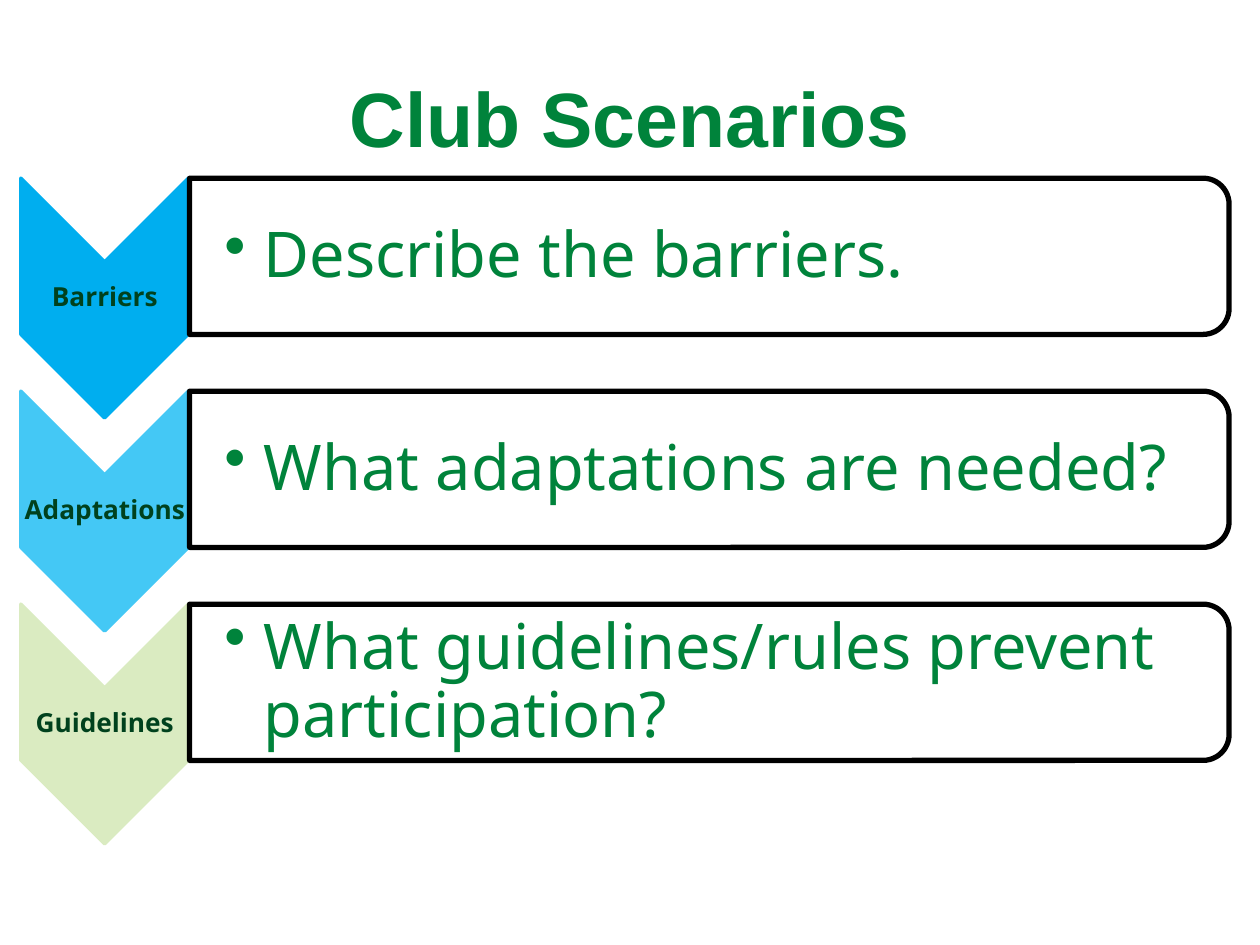
import dataclasses

import lxml.etree
import pptx
import pptx.dml.color
import pptx.enum.shapes
import pptx.enum.text
import pptx.oxml.ns
import pptx.util

Pt = pptx.util.Pt
RGBColor = pptx.dml.color.RGBColor
ShapeType = pptx.enum.shapes.MSO_SHAPE
Align = pptx.enum.text.PP_ALIGN
qn = pptx.oxml.ns.qn

GREEN = RGBColor(0x00, 0x83, 0x3B)
DARK_GREEN = RGBColor(0x00, 0x41, 0x1D)
BLUE = RGBColor(0x00, 0xAE, 0xEF)
LIGHT_BLUE = RGBColor(0x44, 0xC8, 0xF5)
PALE_GREEN = RGBColor(0xDA, 0xEB, 0xC1)
WHITE = RGBColor(0xFF, 0xFF, 0xFF)
BLACK = RGBColor(0x00, 0x00, 0x00)

ROW_PITCH = 121.7
HANGING_INDENT = 22.5


@dataclasses.dataclass(frozen=True)
class Box:
    left: float
    top: float
    width: float
    height: float

    def moved_down(self, distance: float) -> "Box":
        return dataclasses.replace(self, top=self.top + distance)

    def lengths(self) -> list:
        return [Pt(value) for value in dataclasses.astuple(self)]


@dataclasses.dataclass(frozen=True)
class TextStyle:
    font: str
    size: float
    color: RGBColor
    bold: bool = False
    centered: bool = True
    insets: tuple = (7.2, 3.6, 7.2, 3.6)
    line_spacing: float = 1.0
    space_after: float = 0
    bullet: str = ""


@dataclasses.dataclass(frozen=True)
class Scenario:
    label: str
    question: str
    color: RGBColor


TITLE_BOX = Box(36, 21.6, 648, 90)
CHEVRON_BOX = Box(-8.7, 122.4, 137, 95.8)
LABEL_BOX = Box(12, 149.6, 95.8, 41)
PANEL_BOX = Box(360.7, -150.5, 89.3, 594)
QUESTION_BOX = Box(108, 106.4, 589.7, 80.6)

TITLE_STYLE = TextStyle("Arial", 44, GREEN, bold=True)
LABEL_STYLE = TextStyle("Noto Sans", 15, DARK_GREEN, bold=True,
                        insets=(0.75, 0.75, 0.75, 0.75),
                        line_spacing=0.9, space_after=5.25)
QUESTION_STYLE = TextStyle("Noto Sans", 36, GREEN, centered=False,
                           insets=(20.2, 1.8, 1.8, 1.8),
                           line_spacing=0.9, space_after=5.4, bullet="•")

SCENARIOS = [
    Scenario("Barriers", "Describe the barriers.", BLUE),
    Scenario("Adaptations", "What adaptations are needed?", LIGHT_BLUE),
    Scenario("Guidelines", "What guidelines/rules prevent participation?", PALE_GREEN),
]


def add_text(slide: pptx.slide.Slide, box: Box, text: str, style: TextStyle) -> None:
    frame = slide.shapes.add_textbox(*box.lengths()).text_frame
    frame.word_wrap = True
    frame.vertical_anchor = pptx.enum.text.MSO_ANCHOR.MIDDLE
    (frame.margin_left, frame.margin_top,
     frame.margin_right, frame.margin_bottom) = map(Pt, style.insets)
    paragraph = frame.paragraphs[0]
    paragraph.alignment = Align.CENTER if style.centered else Align.LEFT
    paragraph.line_spacing = style.line_spacing
    paragraph.space_after = Pt(style.space_after)
    if style.bullet:
        properties = paragraph._p.get_or_add_pPr()
        properties.set("marL", str(Pt(HANGING_INDENT)))
        properties.set("indent", str(Pt(-HANGING_INDENT)))
        lxml.etree.SubElement(properties, qn("a:buChar")).set("char", style.bullet)
    run = paragraph.add_run()
    run.text = text
    run.font.name = style.font
    run.font.size = Pt(style.size)
    run.font.bold = style.bold
    run.font.color.rgb = style.color


def add_turned_shape(slide: pptx.slide.Slide, kind: ShapeType, box: Box, fill: RGBColor,
                     line: RGBColor, line_width: float, opacity: int = 100) -> None:
    shape = slide.shapes.add_shape(kind, *box.lengths())
    shape.rotation = 90
    shape.shadow.inherit = False
    shape.fill.solid()
    shape.fill.fore_color.rgb = fill
    if opacity < 100:
        color = shape._element.spPr.find(qn("a:solidFill")).find(qn("a:srgbClr"))
        lxml.etree.SubElement(color, qn("a:alpha")).set("val", str(opacity * 1000))
    shape.line.color.rgb = line
    shape.line.width = Pt(line_width)
    lxml.etree.SubElement(shape.line._get_or_add_ln(), qn("a:round"))


def add_scenario(slide: pptx.slide.Slide, scenario: Scenario, offset: float) -> None:
    add_turned_shape(slide, ShapeType.CHEVRON, CHEVRON_BOX.moved_down(offset),
                     scenario.color, scenario.color, 2)
    add_text(slide, LABEL_BOX.moved_down(offset), scenario.label, LABEL_STYLE)
    add_turned_shape(slide, ShapeType.ROUND_2_SAME_RECTANGLE,
                     PANEL_BOX.moved_down(offset), WHITE, BLACK, 3, opacity=90)
    add_text(slide, QUESTION_BOX.moved_down(offset), scenario.question, QUESTION_STYLE)


def main() -> None:
    presentation = pptx.Presentation()
    presentation.slide_width = Pt(720)
    presentation.slide_height = Pt(540)
    slide = presentation.slides.add_slide(presentation.slide_layouts[6])
    add_text(slide, TITLE_BOX, "Club Scenarios", TITLE_STYLE)
    for index, scenario in enumerate(SCENARIOS):
        add_scenario(slide, scenario, index * ROW_PITCH)
    presentation.save("out.pptx")


if __name__ == "__main__":
    main()
